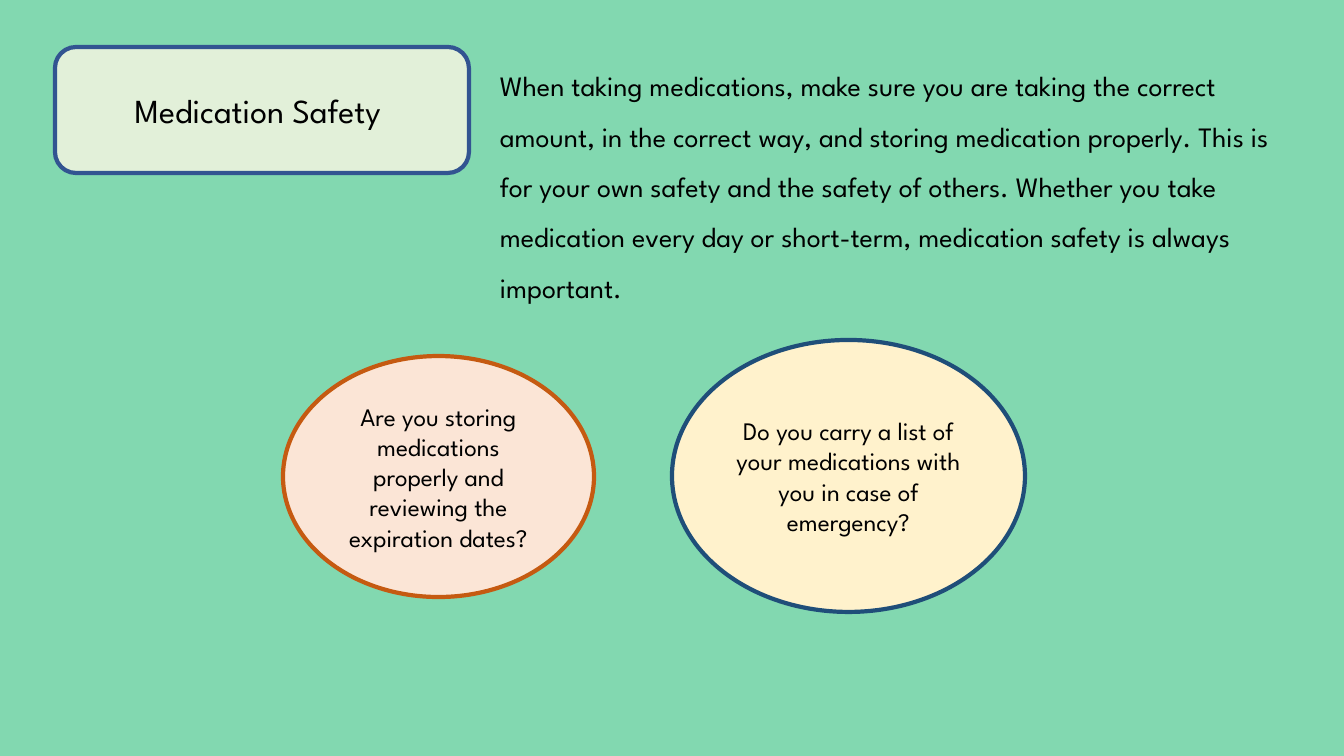
"""Builds the Medication Safety slide."""
from pptx import Presentation
from pptx.dml.color import RGBColor
from pptx.enum.shapes import MSO_SHAPE as Shape
from pptx.enum.text import MSO_ANCHOR as Anchor, PP_ALIGN as Align
from pptx.util import Pt

PX = 914400 / 100.8
FONT = "League Spartan"
COLORS = {
    "page": "82D8B0", "text": "000000",
    "green": "E2F0D9", "indigo": "325491",
    "yellow": "FFF2CC", "navy": "1F4E79",
    "peach": "FBE5D6", "orange": "C55A11",
}
INTRO = (
    "When taking medications, make sure you are taking the correct amount, "
    "in the correct way, and storing medication properly. This is for your own "
    "safety and the safety of others. Whether you take medication every day or "
    "short-term, medication safety is always important."
)
INTRO_AREA = (490, 47, 798, 258)
CARDS = [
    (Shape.ROUNDED_RECTANGLE, (55, 47, 414, 126), "green", "indigo", 24,
     "Medication Safety "),
    (Shape.OVAL, (672, 340, 353, 272), "yellow", "navy", 18,
     "Do you carry a list of your medications with you in case of emergency?"),
    (Shape.OVAL, (283, 356, 311, 241), "peach", "orange", 18,
     "Are you storing medications properly and reviewing the expiration dates?"),
]


def emu(*lengths):
    return [round(length * PX) for length in lengths]


def color(name):
    return RGBColor.from_string(COLORS[name])


def write(box, text, size, align, anchor, spacing=None):
    frame = box.text_frame
    frame.word_wrap = True
    frame.vertical_anchor = anchor
    para = frame.paragraphs[0]
    para.text = text
    para.alignment = align
    para.line_spacing = spacing
    para.font.name = FONT
    para.font.size = Pt(size)
    para.font.color.rgb = color("text")


def add_card(page, kind, area, fill, line, size, text):
    card = page.shapes.add_shape(kind, *emu(*area))
    card.shadow.inherit = False
    card.fill.solid()
    card.fill.fore_color.rgb = color(fill)
    card.line.color.rgb = color(line)
    card.line.width = Pt(3)
    write(card, text, size, Align.CENTER, Anchor.MIDDLE)


def main():
    deck = Presentation()
    deck.slide_width, deck.slide_height = emu(1344, 756)
    page = deck.slides.add_slide(deck.slide_layouts[6])
    page.background.fill.solid()
    page.background.fill.fore_color.rgb = color("page")
    intro = page.shapes.add_textbox(*emu(*INTRO_AREA))
    write(intro, INTRO, 20, Align.LEFT, Anchor.TOP, 1.5)
    for card in CARDS:
        add_card(page, *card)
    deck.save("out.pptx")


if __name__ == "__main__":
    main()
